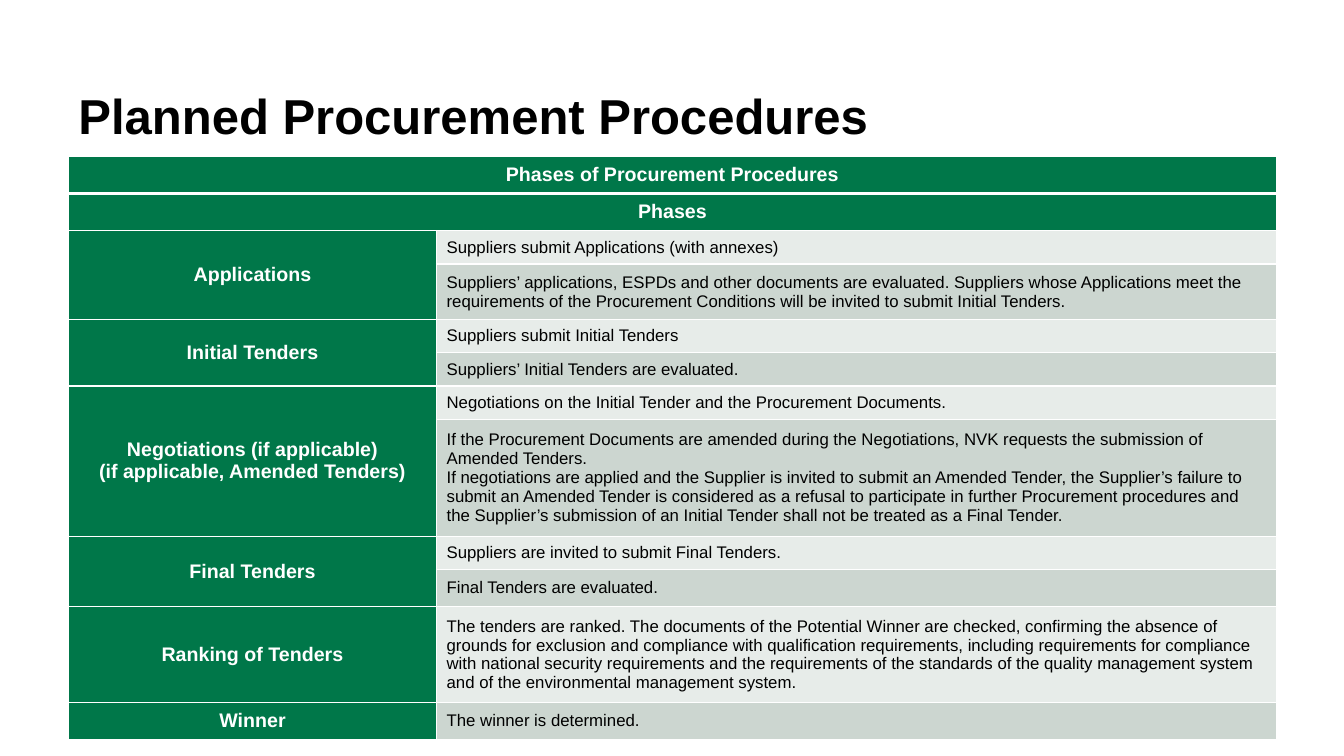
from lxml import etree
from pptx import Presentation
from pptx.dml.color import RGBColor
from pptx.enum.text import MSO_ANCHOR, PP_ALIGN
from pptx.oxml.ns import qn
from pptx.util import Inches, Pt

TITLE = "Planned Procurement Procedures"
HEADERS = ["Phases of Procurement Procedures", "Phases"]
PHASES = [
    (["Applications"], [
        ["Suppliers submit Applications (with annexes)"],
        ["Suppliers’ applications, ESPDs and other documents are evaluated. Suppliers whose "
         "Applications meet the requirements of the Procurement Conditions will be invited to "
         "submit Initial Tenders."],
    ]),
    (["Initial Tenders"], [
        ["Suppliers submit Initial Tenders"],
        ["Suppliers’ Initial Tenders are evaluated."],
    ]),
    (["Negotiations (if applicable)", "(if applicable, Amended Tenders)"], [
        ["Negotiations on the Initial Tender and the Procurement Documents."],
        ["If the Procurement Documents are amended during the Negotiations, NVK requests the "
         "submission of Amended Tenders.",
         "If negotiations are applied and the Supplier is invited to submit an Amended Tender, "
         "the Supplier’s failure to submit an Amended Tender is considered as a refusal to "
         "participate in further Procurement procedures and the Supplier’s submission of an "
         "Initial Tender shall not be treated as a Final Tender."],
    ]),
    (["Final Tenders"], [
        ["Suppliers are invited to submit Final Tenders."],
        ["Final Tenders are evaluated."],
    ]),
    (["Ranking of Tenders"], [
        ["The tenders are ranked. The documents of the Potential Winner are checked, confirming "
         "the absence of grounds for exclusion and compliance with qualification requirements, "
         "including requirements for compliance with national security requirements and the "
         "requirements of the standards of the quality management system and of the "
         "environmental management system."],
    ]),
    (["Winner"], [["The winner is determined."]]),
]

COLUMNS = [3.65, 8.33]
ROWS = [0.37, 0.37, 0.33, 0.55, 0.33, 0.33, 0.33, 1.16, 0.33, 0.37, 0.95, 0.37]
LEFT, TITLE_TOP, TABLE_TOP = 0.68, 0.87, 1.55

FONT = "Arial"
GREEN = RGBColor(0x00, 0x77, 0x49)
WHITE = RGBColor(0xFF, 0xFF, 0xFF)
BLACK = RGBColor(0x00, 0x00, 0x00)
BANDS = [RGBColor(0xE7, 0xEC, 0xE9), RGBColor(0xCC, 0xD6, 0xD0)]
CENTER, LEFT_ALIGN = PP_ALIGN.CENTER, PP_ALIGN.LEFT
MIDDLE = MSO_ANCHOR.MIDDLE


def write(tf, lines, size, color, bold, align=LEFT_ALIGN):
    for i, line in enumerate(lines):
        p = tf.add_paragraph() if i else tf.paragraphs[0]
        p.alignment = align
        r = p.add_run()
        r.text = line
        r.font.name = FONT
        r.font.size = Pt(size)
        r.font.bold = bold
        r.font.color.rgb = color


def set_borders(cell, bottom):
    tcPr = cell._tc.get_or_add_tcPr()
    for i, (side, width) in enumerate([("L", 1), ("R", 1), ("T", 1), ("B", bottom)]):
        ln = etree.Element(qn("a:ln" + side), w=str(Pt(width)))
        fill = etree.SubElement(ln, qn("a:solidFill"))
        etree.SubElement(fill, qn("a:srgbClr"), val=str(WHITE))
        tcPr.insert(i, ln)


def fill_cell(cell, lines, color, heading):
    cell.fill.solid()
    cell.fill.fore_color.rgb = color
    cell.vertical_anchor = MIDDLE
    if heading:
        write(cell.text_frame, lines, 14, WHITE, True, CENTER)
    else:
        write(cell.text_frame, lines, 12, BLACK, False)


prs = Presentation()
prs.slide_width, prs.slide_height = Inches(13.33), Inches(7.5)
s = prs.slides.add_slide(prs.slide_layouts[6])

tf = s.shapes.add_textbox(Inches(LEFT), Inches(TITLE_TOP), Inches(8.99), Inches(0.76)).text_frame
tf.word_wrap = True
write(tf, [TITLE], 35, BLACK, True)
tf.paragraphs[0].line_spacing = 0.9

table = s.shapes.add_table(len(ROWS), len(COLUMNS), Inches(LEFT), Inches(TABLE_TOP),
                           Inches(sum(COLUMNS)), Inches(sum(ROWS))).table
for column, width in zip(table.columns, COLUMNS):
    column.width = Inches(width)
for row, height in zip(table.rows, ROWS):
    row.height = Inches(height)

for i, header in enumerate(HEADERS):
    table.cell(i, 0).merge(table.cell(i, 1))
    fill_cell(table.cell(i, 0), [header], GREEN, True)

row = len(HEADERS)
for phase, steps in PHASES:
    if len(steps) > 1:
        table.cell(row, 0).merge(table.cell(row + len(steps) - 1, 0))
    fill_cell(table.cell(row, 0), phase, GREEN, True)
    for step in steps:
        fill_cell(table.cell(row, 1), step, BANDS[row % 2], False)
        row += 1

for i in range(len(ROWS)):
    for j in range(len(COLUMNS)):
        set_borders(table.cell(i, j), 1 if i else 3)

prs.save("out.pptx")
